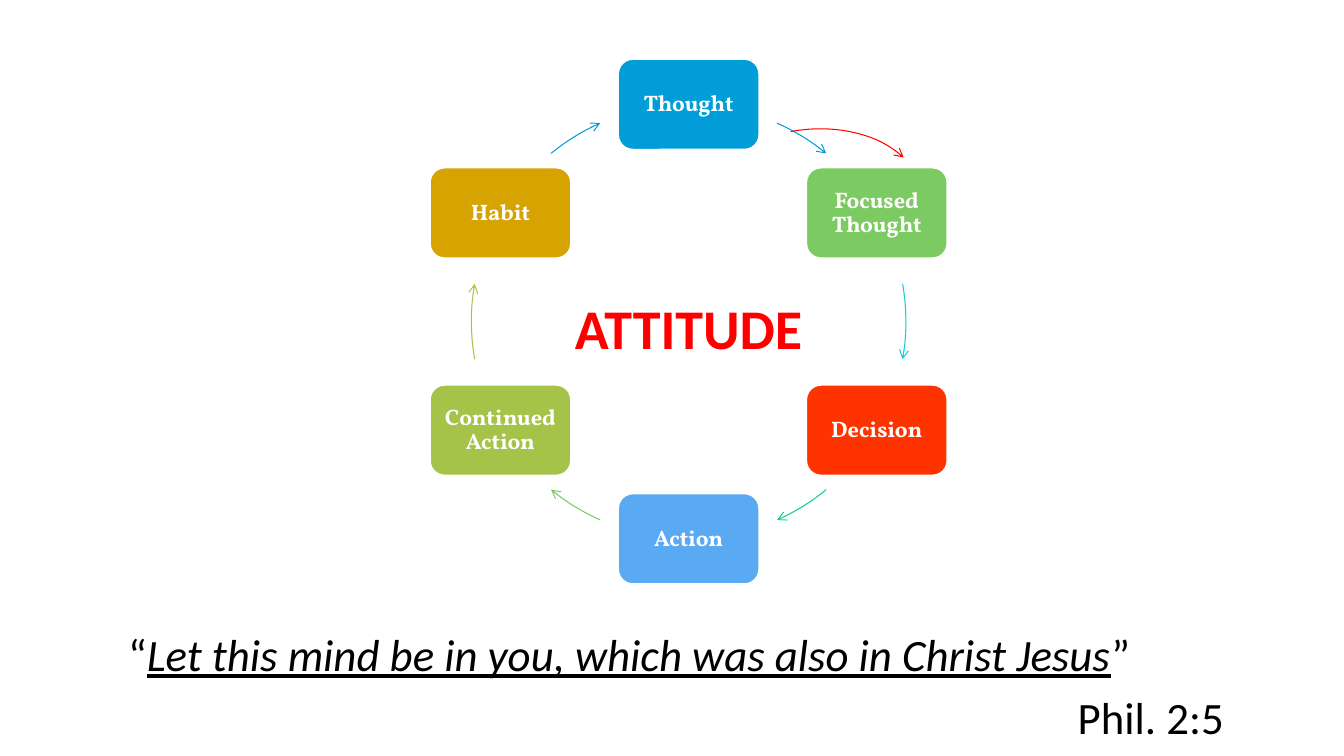
from dataclasses import dataclass
from math import cos, radians, sin

from pptx import Presentation
from pptx.dml.color import RGBColor
from pptx.enum.shapes import MSO_SHAPE
from pptx.enum.text import MSO_ANCHOR, MSO_AUTO_SIZE, PP_ALIGN
from pptx.oxml.ns import qn
from pptx.util import Inches, Pt


@dataclass(frozen=True)
class Theme:
    sans: str = "Calibri"
    serif: str = "Vollkorn"
    white: str = "FFFFFF"
    black: str = "000000"
    red: str = "FF0000"
    title: int = 40
    verse: int = 32
    label: int = 16
    edge: float = 2
    thin: float = 0.75


def write(par, text, font, size, color, bold=False, italic=False, under=False):
    """Add one run with its format to a paragraph."""
    run = par.add_run()
    run.text = text
    face = run.font
    face.name, face.size = font, Pt(size)
    face.bold, face.italic, face.underline = bold, italic, under
    face.color.rgb = RGBColor.from_string(color)


class Board:
    def __init__(self, slide, theme):
        self.slide, self.theme = slide, theme

    def place(self, shape, left, top, width, height):
        shape.left, shape.top = Inches(left), Inches(top)
        shape.width, shape.height = Inches(width), Inches(height)

    def frame(self, shape, anchor, margins):
        frame = shape.text_frame
        frame.word_wrap = True
        frame.auto_size = MSO_AUTO_SIZE.NONE
        frame.vertical_anchor = anchor
        (frame.margin_left, frame.margin_top,
         frame.margin_right, frame.margin_bottom) = map(Inches, margins)
        return frame

    def title(self, text, *box):
        look, shape = self.theme, self.slide.shapes.title
        self.place(shape, *box)
        par = self.frame(shape, MSO_ANCHOR.BOTTOM, (0, 0.05, 0, 0)).paragraphs[0]
        par.alignment = PP_ALIGN.CENTER
        write(par, text, look.sans, look.title, look.red, bold=True)

    def verse(self, quote, source, *box):
        look, shape = self.theme, self.slide.placeholders[1]
        self.place(shape, *box)
        frame = self.frame(shape, MSO_ANCHOR.TOP, (0.1, 0.05, 0.1, 0.05))
        first, last = frame.paragraphs[0], frame.add_paragraph()
        for par in (first, last):
            props = par._p.get_or_add_pPr()
            props.set("marL", str(Inches(0.4)))
            props.set("indent", str(Inches(-0.3)))
            props.append(props.makeelement(qn("a:buNone"), {}))
        style = dict(font=look.sans, size=look.verse, color=look.black)
        write(first, "“", **style)
        write(first, quote, italic=True, under=True, **style)
        write(first, "”", **style)
        last.alignment = PP_ALIGN.RIGHT
        write(last, source, **style)

    def card(self, text, fill, *box):
        look = self.theme
        shape = self.slide.shapes.add_shape(
            MSO_SHAPE.ROUNDED_RECTANGLE, *map(Inches, box))
        shape.shadow.inherit = False
        shape.fill.solid()
        shape.fill.fore_color.rgb = RGBColor.from_string(fill)
        shape.line.color.rgb = RGBColor.from_string(look.white)
        shape.line.width = Pt(look.edge)
        par = self.frame(shape, MSO_ANCHOR.MIDDLE, [0.07] * 4).paragraphs[0]
        par.alignment = PP_ALIGN.CENTER
        par.line_spacing = 0.9
        write(par, text, look.serif, look.label, look.white, bold=True)

    def arc(self, start, end, color, *box, turn=0):
        """Draw a clockwise arrow between two angles in degrees."""
        shape = self.slide.shapes.add_shape(MSO_SHAPE.ARC, *map(Inches, box))
        shape.shadow.inherit = False
        # One degree is 60000 units, and an adjustment of 1 is 100000
        shape.adjustments[0] = start % 360 * 0.6
        shape.adjustments[1] = end % 360 * 0.6
        shape.rotation = turn
        shape.fill.background()
        shape.line.color.rgb = RGBColor.from_string(color)
        shape.line.width = Pt(self.theme.thin)
        line = shape.element.spPr.find(qn("a:ln"))
        line.append(line.makeelement(qn("a:tailEnd"), {"type": "arrow"}))


# Label, card fill, arrow colour, arrow start and end angles
STAGES = [
    ("Thought", "009DD9", "009DD9", -66, -50.7),
    ("Focused Thought", "7CCA62", "0BD0D9", -10, 10),
    ("Decision", "FF3300", "10CF9B", 50.7, 66),
    ("Action", "59AAF2", "7CCA62", 114, 129.3),
    ("Continued Action", "A5C249", "A5C249", 170, 190),
    ("Habit", "D6A300", "009DD9", 230.7, 246),
]


def main():
    deck = Presentation()
    deck.slide_width, deck.slide_height = Inches(13.33), Inches(7.5)
    theme = Theme()
    board = Board(deck.slides.add_slide(deck.slide_layouts[1]), theme)

    # Cycle of cards and arrows
    mid_x, mid_y, radius = 6.83, 3.19, 2.155
    wide, high = 1.41, 0.91
    ring = (mid_x - radius, mid_y - radius, 2 * radius, 2 * radius)
    for step, (label, fill, color, start, end) in enumerate(STAGES):
        angle = radians(step * 360 / len(STAGES) - 90)
        left = mid_x + radius * cos(angle) - wide / 2
        top = mid_y + radius * sin(angle) - high / 2
        board.card(label, fill, left, top, wide, high)
        board.arc(start, end, color, *ring)

    # Centre word and verse
    board.title("ATTITUDE", 2.33, 2.75, 9, 0.83)
    board.verse("Let this mind be in you, which was also in Christ Jesus",
                "Phil. 2:5", 1.07, 6.17, 11.17, 1.19)

    # Red arrow from thought to focused thought
    board.arc(270, 337.11, theme.red, 6.8, 1.29, 2.42, 1.81, turn=349.3)
    deck.save("out.pptx")


if __name__ == "__main__":
    main()
